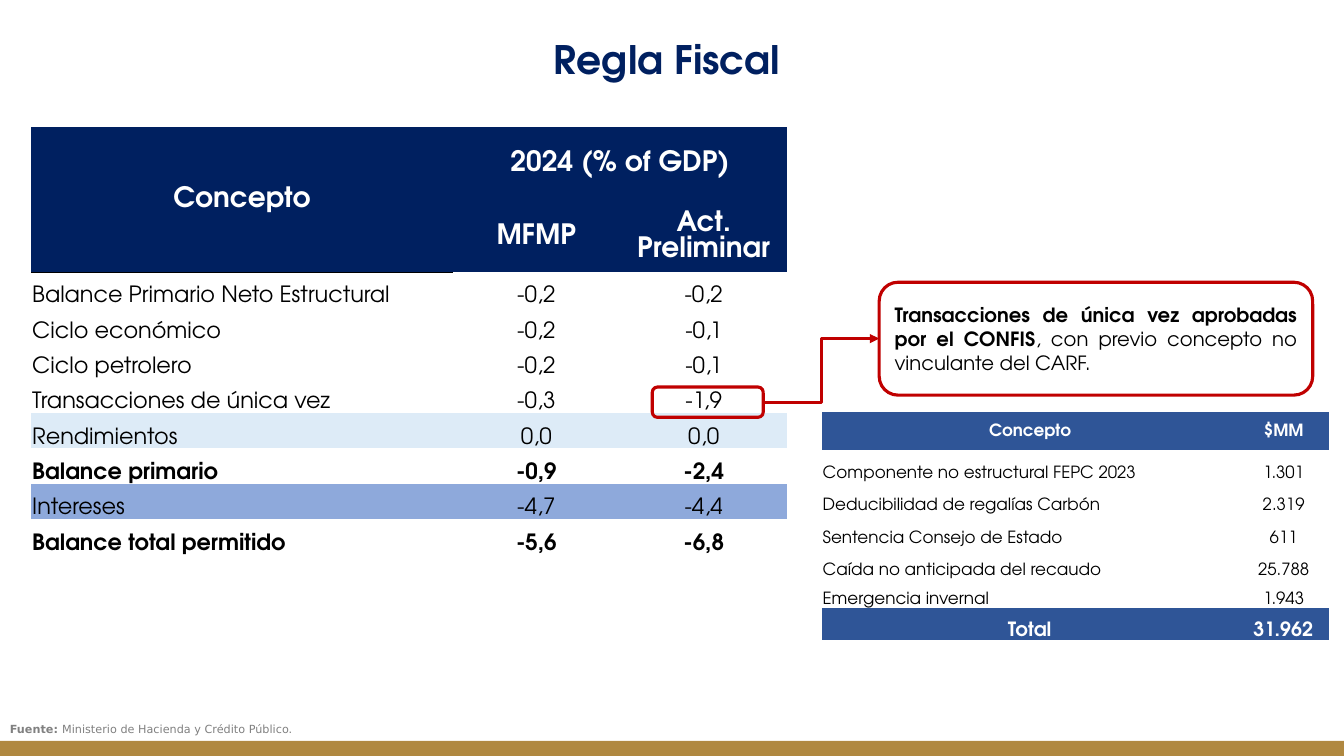
from lxml import etree
from pptx import Presentation
from pptx.dml.color import RGBColor
from pptx.enum.shapes import MSO_CONNECTOR, MSO_SHAPE
from pptx.enum.text import MSO_ANCHOR, PP_ALIGN
from pptx.oxml.ns import qn
from pptx.util import Inches, Pt

LEFT, CENTER, JUSTIFY = PP_ALIGN.LEFT, PP_ALIGN.CENTER, PP_ALIGN.JUSTIFY
TOP, MIDDLE, BOTTOM = MSO_ANCHOR.TOP, MSO_ANCHOR.MIDDLE, MSO_ANCHOR.BOTTOM
RECT, ROUNDED = MSO_SHAPE.RECTANGLE, MSO_SHAPE.ROUNDED_RECTANGLE
ELBOW = MSO_CONNECTOR.ELBOW
NAVY = RGBColor(0x00, 0x20, 0x60)
BLUE = RGBColor(0x2F, 0x55, 0x97)
MID_BLUE = RGBColor(0x8E, 0xA9, 0xDB)
PALE_BLUE = RGBColor(0xDD, 0xEB, 0xF7)
RED = RGBColor(0xC0, 0x00, 0x00)
GOLD = RGBColor(0xB0, 0x88, 0x40)
GRAY = RGBColor(0x80, 0x80, 0x80)
BLACK = RGBColor(0x00, 0x00, 0x00)
WHITE = RGBColor(0xFF, 0xFF, 0xFF)
FONT = "TeX Gyre Adventor"
SOURCE_FONT = "DejaVu Sans"
NO_STYLE = "{2D5ABB26-0587-4C30-8999-92F81FD0307C}"

BALANCES = [
    ("Balance Primario Neto Estructural", "-0,2", "-0,2", None, False),
    ("Ciclo económico", "-0,2", "-0,1", None, False),
    ("Ciclo petrolero", "-0,2", "-0,1", None, False),
    ("Transacciones de única vez", "-0,3", "-1,9", None, False),
    ("Rendimientos", "0,0", "0,0", PALE_BLUE, False),
    ("Balance primario", "-0,9", "-2,4", None, True),
    ("Intereses", "-4,7", "-4,4", MID_BLUE, False),
    ("Balance total permitido", "-5,6", "-6,8", None, True),
]
TRANSACTIONS = [
    ("Componente no estructural FEPC 2023", "1.301 "),
    ("Deducibilidad de regalías Carbón", "2.319 "),
    ("Sentencia Consejo de Estado", "611 "),
    ("Caída no anticipada del recaudo", "25.788 "),
    ("Emergencia invernal", "1.943 "),
]


def add_run(p, text, size, color, bold=False, font=FONT):
    """Append a formatted run to a paragraph."""
    r = p.add_run()
    r.text = text
    r.font.name, r.font.size, r.font.bold = font, Pt(size), bold
    r.font.color.rgb = color


def add_text(s, box, anchor):
    """Add a wrapping text box and return its first paragraph."""
    tf = s.shapes.add_textbox(*map(Inches, box)).text_frame
    tf.word_wrap = True
    tf.vertical_anchor = anchor
    return tf.paragraphs[0]


def add_plain_table(s, left, top, widths, heights):
    """Add a table without style, sized by its columns and rows."""
    box = map(Inches, (left, top, sum(widths), sum(heights)))
    table = s.shapes.add_table(len(heights), len(widths), *box).table
    table.first_row = table.horz_banding = False
    table._tbl.tblPr.find(qn("a:tableStyleId")).text = NO_STYLE
    for column, width in zip(table.columns, widths):
        column.width = Inches(width)
    for row, height in zip(table.rows, heights):
        row.height = Inches(height)
    return table


def fill_cell(cell, text, size, color=BLACK, bold=False, fill=None,
              align=CENTER, anchor=BOTTOM):
    """Write one table cell."""
    cell.margin_left = cell.margin_right = cell.margin_top = Inches(0.01)
    cell.margin_bottom = 0
    cell.vertical_anchor = anchor
    if fill is None:
        cell.fill.background()
    else:
        cell.fill.solid()
        cell.fill.fore_color.rgb = fill
    p = cell.text_frame.paragraphs[0]
    p.alignment = align
    add_run(p, text, size, color, bold)


def add_bottom_border(cell):
    """Draw a thin black line under a cell."""
    line = etree.Element(qn("a:lnB"), w=str(Pt(0.75)))
    fill = etree.SubElement(line, qn("a:solidFill"))
    etree.SubElement(fill, qn("a:srgbClr"), val=str(BLACK))
    cell._tc.get_or_add_tcPr().insert(0, line)


def balance_table(s, left, top):
    """Build the fiscal balance table."""
    table = add_plain_table(s, left, top, [4.18, 1.66, 1.66],
                            [0.72] * 2 + [0.35] * len(BALANCES))
    table.cell(0, 0).merge(table.cell(1, 0))
    table.cell(0, 1).merge(table.cell(0, 2))
    headers = [(0, 0, "Concepto"), (0, 1, "2024 (% of GDP)"),
               (1, 1, "MFMP"), (1, 2, "Act. Preliminar")]
    for row, col, text in headers:
        fill_cell(table.cell(row, col), text, 20, WHITE, True, NAVY, anchor=MIDDLE)
    for row in range(2):
        add_bottom_border(table.cell(row, 0))
    for row, (*texts, fill, bold) in enumerate(BALANCES, 2):
        for col, text in enumerate(texts):
            fill_cell(table.cell(row, col), text, 16, bold=bold, fill=fill,
                      align=CENTER if col else LEFT)


def transaction_table(s, left, top):
    """Build the table of one-off transactions."""
    table = add_plain_table(s, left, top, [4.18, 0.85],
                            [0.37] + [0.32] * 4 + [0.29, 0.32])
    for col, text in enumerate(("Concepto ", "$MM ")):
        fill_cell(table.cell(0, col), text, 12, WHITE, True, BLUE, anchor=MIDDLE)
    for row, texts in enumerate(TRANSACTIONS, 1):
        for col, text in enumerate(texts):
            fill_cell(table.cell(row, col), text, 12, align=CENTER if col else LEFT)
    for col, text in enumerate(("Total ", "31.962 ")):
        fill_cell(table.cell(len(TRANSACTIONS) + 1, col), text, 14, WHITE, True, BLUE)


def add_frame(s, box):
    """Add a red rounded outline."""
    sp = s.shapes.add_shape(ROUNDED, *map(Inches, box))
    sp.shadow.inherit = False
    sp.fill.background()
    sp.line.color.rgb, sp.line.width = RED, Pt(2.25)
    return sp


def callout(s, marker_box, note_box):
    """Frame a table value and link it to its explanation."""
    marker, note = add_frame(s, marker_box), add_frame(s, note_box)
    tf = note.text_frame
    tf.word_wrap = True
    tf.vertical_anchor = MIDDLE
    p = tf.paragraphs[0]
    p.alignment = JUSTIFY
    add_run(p, "Transacciones de única vez aprobadas por el CONFIS", 14, BLACK, True)
    add_run(p, ", con previo concepto no vinculante del CARF.", 14, BLACK)
    link = s.shapes.add_connector(ELBOW, 0, 0, 0, 0)
    link.begin_connect(marker, 3)
    link.end_connect(note, 1)
    link.line.color.rgb, link.line.width = RED, Pt(2.25)
    etree.SubElement(link.line._get_or_add_ln(), qn("a:tailEnd"), type="triangle")
    etree.SubElement(link._element.spPr, qn("a:effectLst"))


def title(s, box):
    """Write the slide title."""
    p = add_text(s, box, TOP)
    p.alignment = CENTER
    add_run(p, "Regla Fiscal ", 28, NAVY, True)


def footer(s, bar_box, source_box):
    """Add the gold bar and the source line."""
    bar = s.shapes.add_shape(RECT, *map(Inches, bar_box))
    bar.shadow.inherit = False
    bar.fill.solid()
    bar.fill.fore_color.rgb = GOLD
    bar.line.fill.background()
    p = add_text(s, source_box, MIDDLE)
    p.line_spacing = 0.9
    add_run(p, "Fuente: ", 8, GRAY, True, SOURCE_FONT)
    add_run(p, "Ministerio de Hacienda y Crédito Público.", 8, GRAY, False, SOURCE_FONT)


def main():
    """Build and save the slide."""
    prs = Presentation()
    prs.slide_width, prs.slide_height = Inches(13.33), Inches(7.5)
    s = prs.slides.add_slide(prs.slide_layouts[6])
    footer(s, (0, 7.35, 13.33, 0.15), (0, 7.04, 5.46, 0.4))
    title(s, (0.05, 0.3, 13.24, 0.57))
    balance_table(s, 0.31, 1.26)
    callout(s, (6.47, 3.84, 1.1, 0.3), (8.72, 2.8, 4.3, 1.12))
    transaction_table(s, 8.15, 4.09)
    prs.save("out.pptx")


if __name__ == "__main__":
    main()
